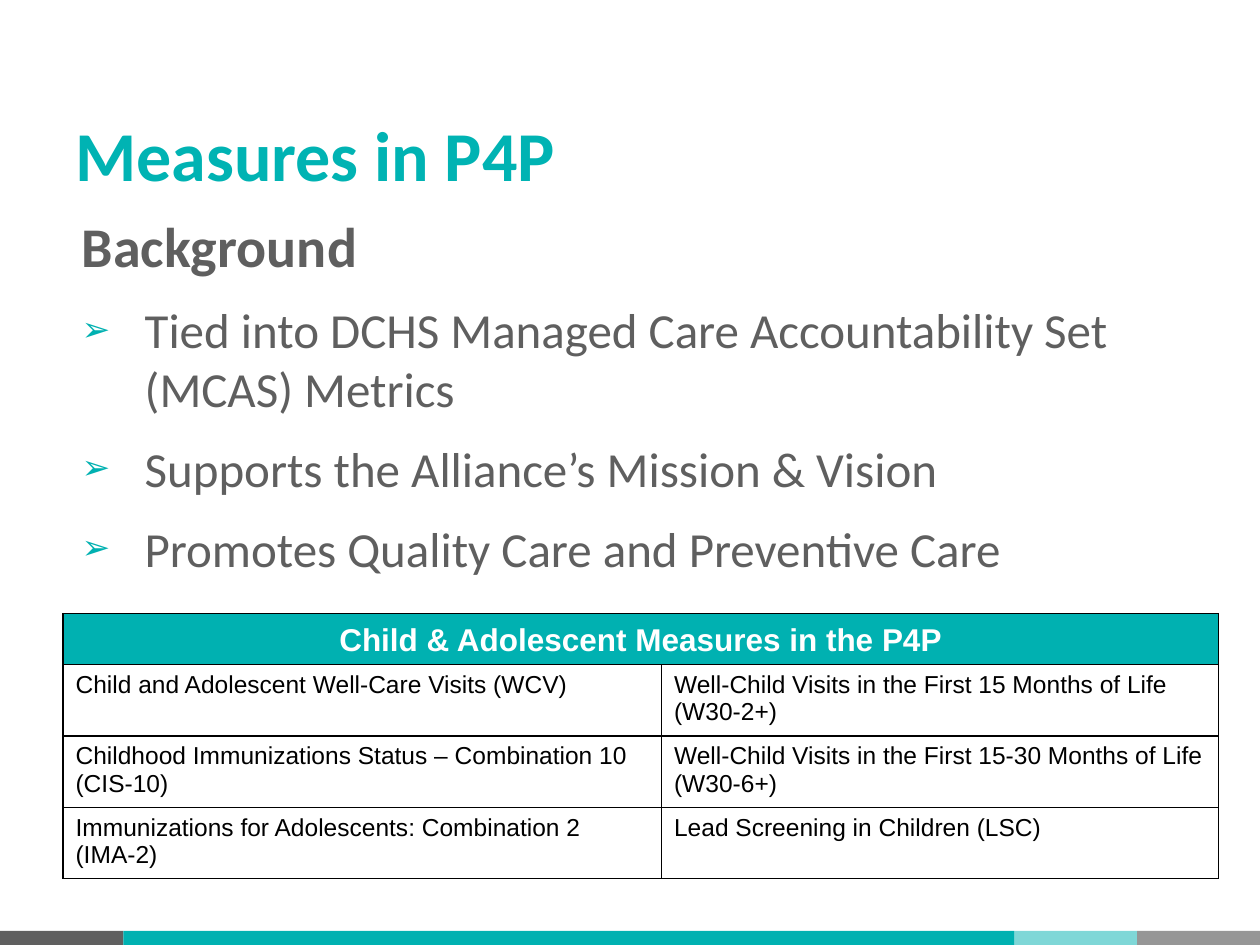
from lxml import etree
from pptx import Presentation
from pptx import util as u
from pptx.dml import color
from pptx.enum import shapes, text
from pptx.oxml import ns

TEAL, GRAY = "00B1B1", "5F5F5F"
TITLE = "Measures in P4P"
HEADING = "Background"
POINTS = [
    "Tied into DCHS Managed Care Accountability Set (MCAS) Metrics",
    "Supports the Alliance’s Mission & Vision",
    "Promotes Quality Care and Preventive Care",
]
TABLE_TITLE = "Child & Adolescent Measures in the P4P"
MEASURES = [
    ("Child and Adolescent Well-Care Visits (WCV)",
     "Well-Child Visits in the First 15 Months of Life (W30-2+)"),
    ("Childhood Immunizations Status – Combination 10 (CIS-10)",
     "Well-Child Visits in the First 15-30 Months of Life (W30-6+)"),
    ("Immunizations for Adolescents: Combination 2 (IMA-2)",
     "Lead Screening in Children (LSC)"),
]
COLUMN_WIDTHS = [342, 318.2]
HEADER_HEIGHT, ROW_HEIGHT = 29.2, 38.6
FOOTER_BANDS = [(70.5, GRAY, 100), (509, TEAL, 100), (70.25, TEAL, 50), (70.25, "969696", 100)]
FOOTER_TOP, SLIDE_WIDTH, SLIDE_HEIGHT = 532, 720, 540


def rgb(value):
    return color.RGBColor.from_string(value)


def add_element(parent, tag, **attributes):
    element = etree.SubElement(parent, ns.qn(tag))
    for name, value in attributes.items():
        element.set(name, str(value))
    return element


def write(paragraph, content, size, font="Calibri", ink=GRAY, bold=False,
          align=None, after=0, margin=0, indent=0, bullet=None):
    paragraph.alignment = align
    paragraph.space_after = u.Pt(after)
    properties = paragraph._p.get_or_add_pPr()
    properties.set("marL", str(u.Pt(margin)))
    properties.set("indent", str(u.Pt(indent)))
    if bullet:
        add_element(add_element(properties, "a:buClr"), "a:srgbClr", val=TEAL)
        add_element(properties, "a:buSzPct", val=70000)
        add_element(properties, "a:buFont", typeface="Arial")
        add_element(properties, "a:buChar", char=bullet)
    run = paragraph.add_run()
    run.text = content
    run.font.size = u.Pt(size)
    run.font.name = font
    run.font.bold = bold
    run.font.color.rgb = rgb(ink)


def add_text_box(slide, left, top, width, height, anchor, insets):
    box = slide.shapes.add_textbox(u.Pt(left), u.Pt(top), u.Pt(width), u.Pt(height))
    frame = box.text_frame
    frame.word_wrap = True
    frame.vertical_anchor = anchor
    frame.margin_left, frame.margin_top, frame.margin_right, frame.margin_bottom = map(u.Pt, insets)
    return frame


def add_footer(slide):
    left = 0
    for width, fill, opacity in FOOTER_BANDS:
        band = slide.shapes.add_shape(
            shapes.MSO_SHAPE.RECTANGLE, u.Pt(left), u.Pt(FOOTER_TOP),
            u.Pt(width), u.Pt(SLIDE_HEIGHT - FOOTER_TOP))
        band.shadow.inherit = False
        band.fill.solid()
        band.fill.fore_color.rgb = rgb(fill)
        band.line.fill.background()
        if opacity < 100:
            tone = band._element.spPr.find(".//" + ns.qn("a:srgbClr"))
            add_element(tone, "a:alpha", val=opacity * 1000)
        left += width


def style_cell(cell, fill=None):
    properties = cell._tc.get_or_add_tcPr()
    for side in ("a:lnL", "a:lnR", "a:lnT", "a:lnB"):
        line = add_element(properties, side, w=u.Pt(0.75))
        add_element(add_element(line, "a:solidFill"), "a:srgbClr", val="000000")
    if fill:
        cell.fill.solid()
        cell.fill.fore_color.rgb = rgb(fill)
    else:
        cell.fill.background()


def add_measures(slide):
    heights = [HEADER_HEIGHT] + [ROW_HEIGHT] * len(MEASURES)
    table = slide.shapes.add_table(
        len(heights), len(COLUMN_WIDTHS), u.Pt(36), u.Pt(350.5),
        u.Pt(sum(COLUMN_WIDTHS)), u.Pt(sum(heights))).table
    for column, width in zip(table.columns, COLUMN_WIDTHS):
        column.width = u.Pt(width)
    for row, height in zip(table.rows, heights):
        row.height = u.Pt(height)
    for cell in table.rows[0].cells:
        style_cell(cell, TEAL)
    header = table.cell(0, 0)
    header.merge(table.cell(0, len(COLUMN_WIDTHS) - 1))
    header.vertical_anchor = text.MSO_ANCHOR.BOTTOM
    write(header.text_frame.paragraphs[0], TABLE_TITLE, 18, "Arial", "FFFFFF",
          bold=True, align=text.PP_ALIGN.CENTER)
    for row_number, measures in enumerate(MEASURES, 1):
        for column_number, measure in enumerate(measures):
            cell = table.cell(row_number, column_number)
            style_cell(cell)
            write(cell.text_frame.paragraphs[0], measure, 14, "Arial", "000000")


def main():
    presentation = Presentation()
    presentation.slide_width, presentation.slide_height = u.Pt(SLIDE_WIDTH), u.Pt(SLIDE_HEIGHT)
    slide = presentation.slides.add_slide(presentation.slide_layouts[6])
    add_footer(slide)
    title = add_text_box(slide, 36, 21.6, 552, 90, text.MSO_ANCHOR.BOTTOM, (7.2, 3.6, 7.2, 0))
    write(title.paragraphs[0], TITLE, 40, ink="00B3B3", bold=True)
    add_measures(slide)
    body = add_text_box(slide, 35.3, 113.8, 661, 234, text.MSO_ANCHOR.TOP, (7.2,) * 4)
    write(body.paragraphs[0], HEADING, 32, bold=True, after=12, margin=4.3)
    for point in POINTS:
        write(body.add_paragraph(), point, 28, after=12, margin=40.3, indent=-36, bullet="➢")
    presentation.save("out.pptx")


if __name__ == "__main__":
    main()
